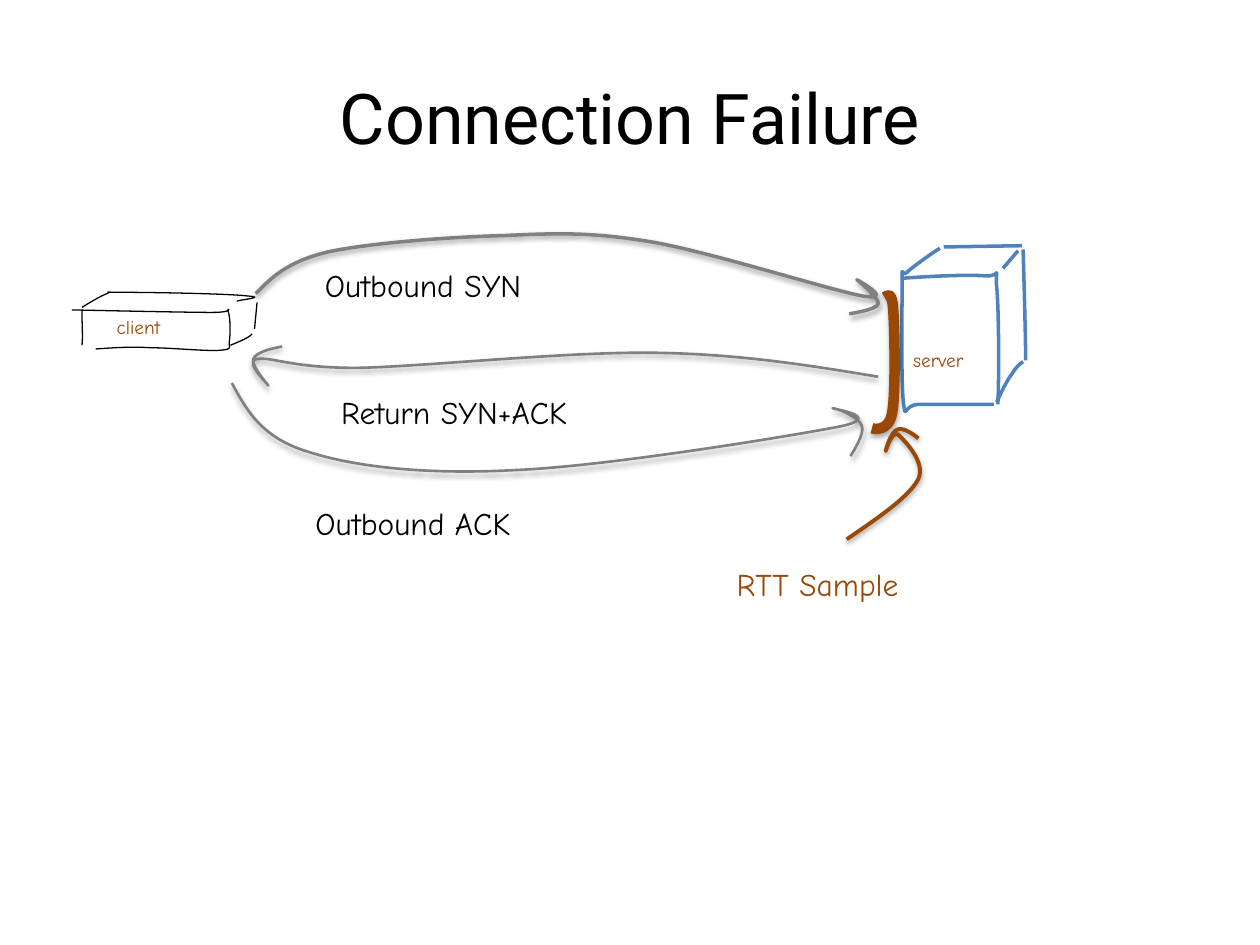
from dataclasses import dataclass

import pptx
import pptx.dml.color
import pptx.enum.text
import pptx.oxml
import pptx.util
from pptx.oxml.ns import nsdecls, qn
from pptx.util import Cm, Pt

BLACK = pptx.dml.color.RGBColor(0x00, 0x00, 0x00)
BLUE = pptx.dml.color.RGBColor(0x4F, 0x81, 0xBD)
GREY = pptx.dml.color.RGBColor(0x80, 0x80, 0x80)
BROWN = pptx.dml.color.RGBColor(0x98, 0x48, 0x07)

GRID = Cm(2.54) / 100  # stroke points are counted on this grid
CURVE_STEPS = 16

Point = tuple[float, float]


@dataclass(frozen=True)
class Pen:
    color: pptx.dml.color.RGBColor
    width: float
    shadow_opacity: int = 0
    shadow_distance: float = 1.8


@dataclass(frozen=True)
class Label:
    text: str
    left: float
    top: float
    width: float
    height: float
    size: float = 18
    color: pptx.dml.color.RGBColor = BLACK
    wrap: bool = False


CLIENT_PEN = Pen(BLACK, 0.75)
SERVER_PEN = Pen(BLUE, 2)
SYN_PEN = Pen(GREY, 2, 38, 1.6)
ACK_PEN = Pen(GREY, 1.5, 35)
BRACKET_PEN = Pen(BROWN, 6, 35)
POINTER_PEN = Pen(BROWN, 2.25, 35)

# A stroke is a start point followed by Bezier triples, or two points for a line.
CLIENT_BOX = [
    [(65, 246), (65, 257), (66, 269), (65, 274)],
    [(76, 277), (90, 276), (103, 275), (120, 276), (136, 276), (165, 279), (175, 278),
     (186, 277), (181, 276), (182, 271), (183, 266), (183, 251), (181, 247),
     (179, 243), (189, 248), (168, 248), (148, 248), (57, 246), (57, 246)],
    [(65, 244), (73, 239), (80, 235), (85, 233), (91, 231), (77, 232), (96, 232),
     (114, 232), (182, 233), (197, 235), (212, 236), (190, 238), (188, 239)],
    [(183, 274), (190, 271), (198, 268), (200, 265)],
    [(204, 240), (202, 261)],
]
SERVER_BOX = [
    [(715, 221), (742, 219), (769, 218), (782, 219), (795, 220), (790, 209), (791, 227),
     (793, 244), (793, 305), (792, 321)],
    [(789, 321), (769, 321), (749, 321), (729, 321), (717, 321), (719, 335), (717, 319),
     (715, 303), (716, 241), (716, 224), (716, 207), (715, 221), (720, 216),
     (724, 212), (741, 200), (746, 197)],
    [(749, 196), (811, 195)],
    [(812, 198), (813, 234), (814, 270), (814, 286)],
    [(812, 287), (809, 289), (806, 292), (803, 297), (799, 302), (795, 311), (791, 319)],
    [(808, 199), (796, 213)],
]
OUTBOUND_SYN = [
    (203, 233), (215, 221), (227, 208), (260, 200), (292, 193), (357, 188), (400, 187),
    (442, 185), (469, 184), (517, 192), (564, 200), (658, 230), (685, 235),
    (712, 239), (678, 221), (680, 222), (682, 223), (698, 237), (697, 241),
    (696, 246), (674, 249), (674, 249)]
RETURN_SYN_ACK = [
    (697, 299), (642, 290), (588, 281), (519, 280), (450, 279), (336, 291), (283, 292),
    (231, 292), (216, 283), (204, 285), (193, 287), (214, 306), (213, 306),
    (213, 306), (199, 290), (201, 285), (203, 280), (213, 277), (224, 275)]
OUTBOUND_ACK = [
    (184, 304), (196, 326), (208, 348), (246, 359), (284, 371), (341, 377), (411, 373),
    (481, 370), (622, 347), (664, 339), (706, 331), (658, 324), (661, 324),
    (664, 324), (682, 331), (684, 338), (687, 344), (675, 362), (675, 362)]
RTT_BRACKET = [
    (702, 236), (705, 234), (708, 231), (709, 247), (710, 262), (711, 313), (708, 328),
    (705, 344), (692, 340), (692, 340)]
RTT_POINTER = [
    (672, 428), (697, 411), (722, 394), (729, 380), (735, 366), (717, 349), (713, 345),
    (708, 341), (703, 358), (703, 358), (703, 357), (707, 343), (712, 341),
    (716, 339), (723, 343), (729, 348)]

DRAWING = [
    *[(stroke, CLIENT_PEN) for stroke in CLIENT_BOX],
    *[(stroke, SERVER_PEN) for stroke in SERVER_BOX],
    (OUTBOUND_SYN, SYN_PEN),
    (RETURN_SYN_ACK, ACK_PEN),
    (OUTBOUND_ACK, ACK_PEN),
    (RTT_BRACKET, BRACKET_PEN),
    (RTT_POINTER, POINTER_PEN),
]

LABELS = [
    Label("Outbound SYN", 6.3, 5.23, 5.46, 1.02),
    Label("Return SYN+ACK", 6.63, 7.8, 6.63, 1.02),
    Label("Outbound ACK", 6.11, 10.03, 5.61, 1.02),
    Label("server", 18.16, 6.9, 1.8, 0.74, 11, BROWN),
    Label("client", 2.1, 6.23, 1.57, 0.74, 11, BROWN),
    Label("RTT Sample", 14.6, 11.27, 7.01, 1.02, 18, BROWN, True),
]


def curves(stroke: list[Point]) -> list[list[Point]]:
    """Return the four control points of each Bezier piece."""
    return [stroke[i:i + 4] for i in range(0, len(stroke) - 3, 3)]


def outline(stroke: list[Point]) -> list[Point]:
    """Return points on the stroke, which give its true extent."""
    if len(stroke) == 2:
        return stroke
    points = [stroke[0]]
    for controls in curves(stroke):
        for step in range(1, CURVE_STEPS + 1):
            t = step / CURVE_STEPS
            u = 1 - t
            weights = (u ** 3, 3 * u * u * t, 3 * u * t * t, t ** 3)
            points.append(tuple(
                sum(w * p[axis] for w, p in zip(weights, controls)) for axis in (0, 1)))
    return points


def set_curves(shape, stroke: list[Point]) -> None:
    """Replace the line segments of the shape by Bezier curves."""
    contour = next(shape._element.iter(qn("a:path")))
    for segment in contour.findall(qn("a:lnTo")):
        contour.remove(segment)
    for controls in curves(stroke):
        points = "".join(
            f'<a:pt x="{round(x * GRID - shape.left)}" y="{round(y * GRID - shape.top)}"/>'
            for x, y in controls[1:])
        contour.append(pptx.oxml.parse_xml(
            f'<a:cubicBezTo {nsdecls("a")}>{points}</a:cubicBezTo>'))


def add_shadow(shape, pen: Pen) -> None:
    effects = shape._element.spPr.find(qn("a:effectLst"))
    effects.append(pptx.oxml.parse_xml(
        f'<a:outerShdw {nsdecls("a")} blurRad="{Pt(3.1)}" '
        f'dist="{Pt(pen.shadow_distance)}" dir="5400000" rotWithShape="0">'
        f'<a:srgbClr val="{BLACK}"><a:alpha val="{pen.shadow_opacity * 1000}"/>'
        '</a:srgbClr></a:outerShdw>'))


def draw_stroke(slide, stroke: list[Point], pen: Pen) -> None:
    start, *rest = [(x * GRID, y * GRID) for x, y in outline(stroke)]
    builder = slide.shapes.build_freeform(*start)
    builder.add_line_segments(rest, close=False)
    shape = builder.convert_to_shape()
    if len(stroke) > 2:
        set_curves(shape, stroke)
    shape.fill.background()
    shape.line.color.rgb = pen.color
    shape.line.width = Pt(pen.width)
    shape.shadow.inherit = False
    if pen.shadow_opacity:
        add_shadow(shape, pen)


def set_font(frame, name: str, size: float, color: pptx.dml.color.RGBColor) -> None:
    font = frame.paragraphs[0].runs[0].font
    font.name, font.size, font.color.rgb = name, Pt(size), color


def draw_label(slide, label: Label) -> None:
    frame = slide.shapes.add_textbox(
        Cm(label.left), Cm(label.top), Cm(label.width), Cm(label.height)).text_frame
    frame.text = label.text
    frame.word_wrap = label.wrap
    frame.auto_size = pptx.enum.text.MSO_AUTO_SIZE.SHAPE_TO_FIT_TEXT
    set_font(frame, "Comic Neue", label.size, label.color)


def main() -> None:
    deck = pptx.Presentation()
    deck.slide_width, deck.slide_height = Cm(25.4), Cm(19.05)
    slide = deck.slides.add_slide(deck.slide_layouts[5])
    title = slide.shapes.title
    title.left, title.top, title.width, title.height = Cm(1.27), Cm(0.76), Cm(22.86), Cm(3.18)
    title.text_frame.text = "Connection Failure"
    title.text_frame.vertical_anchor = pptx.enum.text.MSO_ANCHOR.MIDDLE
    title.text_frame.paragraphs[0].alignment = pptx.enum.text.PP_ALIGN.CENTER
    set_font(title.text_frame, "Roboto", 40, BLACK)
    for stroke, pen in DRAWING:
        draw_stroke(slide, stroke, pen)
    for label in LABELS:
        draw_label(slide, label)
    deck.save("out.pptx")


if __name__ == "__main__":
    main()
